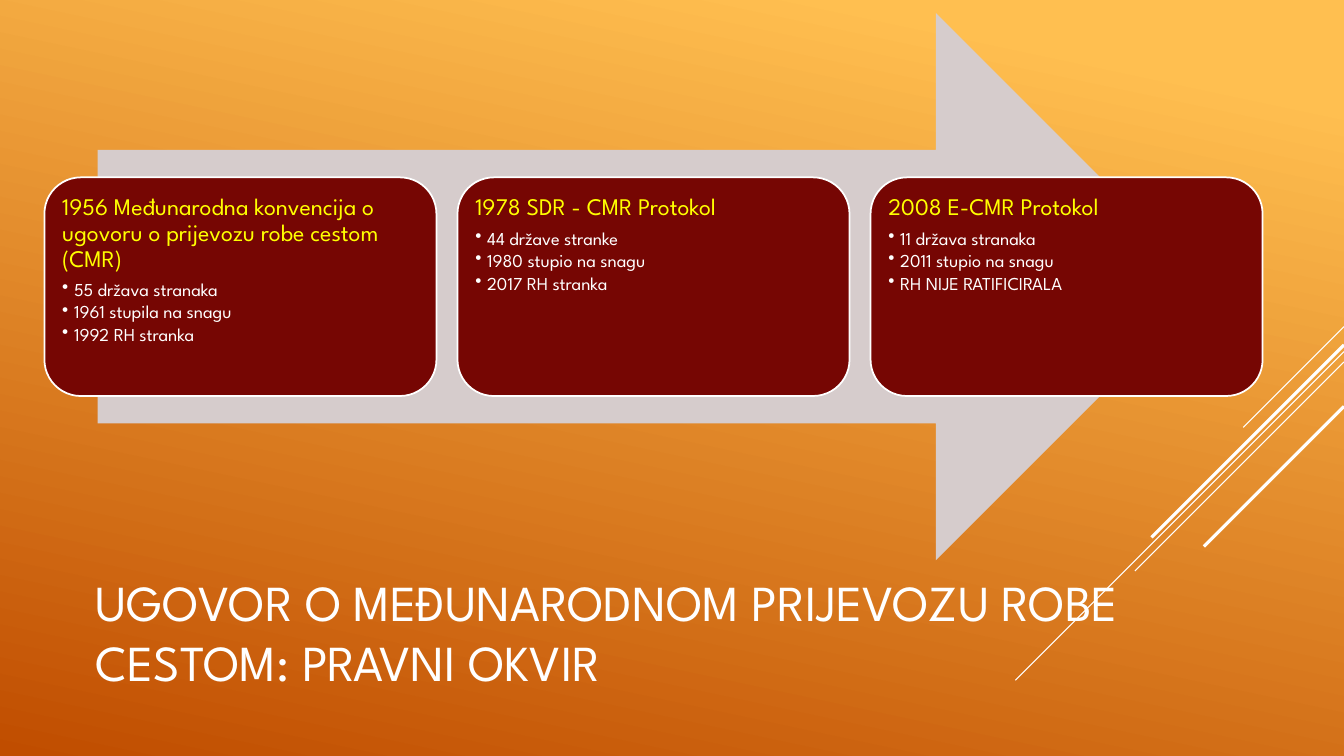
from lxml import etree
from pptx import Presentation
from pptx import util as u
from pptx.dml.color import RGBColor
from pptx.enum import shapes, text
from pptx.oxml.ns import qn

FONT = "League Spartan"
WHITE, YELLOW, MAROON, GREY = "FFFFFF", "FFFF00", "760603", "D6CCCC"
BACKGROUND = [(0.1, "FFBF50"), (1, "C04D00")]
BACKGROUND_ANGLE = 258

TITLE = "UGOVOR O MEĐUNARODNOM PRIJEVOZU ROBE CESTOM: PRAVNI OKVIR"
MILESTONES = [
    ("1956 Međunarodna konvencija o ugovoru o prijevozu robe cestom (CMR)",
     ["55 država stranaka", "1961 stupila na snagu", "1992 RH stranka"]),
    ("1978 SDR - CMR Protokol",
     ["44 države stranke", "1980 stupio na snagu", "2017 RH stranka"]),
    ("2008 E-CMR Protokol",
     ["11 država stranaka", "2011 stupio na snagu", "RH NIJE RATIFICIRALA"]),
]

SLIDE_WIDTH, SLIDE_HEIGHT = 33.87, 19.05
STREAKS = [(8.23, 2.54, 0.75), (8.86, 8.28, 0.75), (9.12, 5.27, 0.75),
           (8.69, 4.85, 2.25), (10.24, 3.53, 2.25)]
TITLE_BOX = (2.16, 13.82, 29.97, 4.19)
ARROW_BOX = (2.46, 0.33, 28.02, 13.79)
CARD_LEFT, CARD_TOP, CARD_WIDTH, CARD_HEIGHT = 1.12, 4.47, 9.88, 5.51
CARD_PITCH = 10.41
CARD_INSET = 0.18
BULLET_INDENT = 0.3


def paint(color, hex_code):
    color.rgb = RGBColor.from_string(hex_code)


def cm(*lengths):
    return [u.Cm(length) for length in lengths]


def write(paragraph, words, size, color, spacing=1.0, after=0, bullet=False):
    paragraph.alignment = text.PP_ALIGN.LEFT
    paragraph.line_spacing = spacing
    paragraph.space_after = u.Pt(after)
    run = paragraph.add_run()
    run.text = words
    run.font.name = FONT
    run.font.size = u.Pt(size)
    paint(run.font.color, color)
    if bullet:
        properties = paragraph._p.get_or_add_pPr()
        properties.set("marL", str(u.Cm(BULLET_INDENT)))
        properties.set("indent", str(-u.Cm(BULLET_INDENT)))
        etree.SubElement(properties, qn("a:buChar")).set("char", "•")


def add_block(slide, preset, box, fill, outline=None):
    block = slide.shapes.add_shape(preset, *cm(*box))
    block.shadow.inherit = False
    block.fill.solid()
    paint(block.fill.fore_color, fill)
    if outline:
        paint(block.line.color, outline)
        block.line.width = u.Pt(1.25)
    else:
        block.line.fill.background()
    return block


def add_streak(slide, top, run, weight):
    streak = slide.shapes.add_connector(
        shapes.MSO_CONNECTOR.STRAIGHT,
        *cm(SLIDE_WIDTH, top, SLIDE_WIDTH - run, top + run))
    paint(streak.line.color, WHITE)
    streak.line.width = u.Pt(weight)
    etree.SubElement(streak._element.spPr, qn("a:effectLst"))


def add_title(slide):
    frame = slide.shapes.add_textbox(*cm(*TITLE_BOX)).text_frame
    frame.word_wrap = True
    frame.vertical_anchor = text.MSO_ANCHOR.MIDDLE
    write(frame.paragraphs[0], TITLE, size=36, color=WHITE)


def add_card(slide, position, heading, facts):
    box = (CARD_LEFT + position * CARD_PITCH, CARD_TOP, CARD_WIDTH, CARD_HEIGHT)
    card = add_block(slide, shapes.MSO_SHAPE.ROUNDED_RECTANGLE, box, MAROON, WHITE)
    frame = card.text_frame
    frame.word_wrap = True
    frame.vertical_anchor = text.MSO_ANCHOR.TOP
    frame.margin_left = frame.margin_right = u.Cm(CARD_INSET)
    frame.margin_top = frame.margin_bottom = u.Cm(CARD_INSET)
    write(frame.paragraphs[0], heading, size=17, color=YELLOW, spacing=0.9, after=6)
    for fact in facts:
        write(frame.add_paragraph(), fact, size=13, color=WHITE,
              spacing=0.9, after=2, bullet=True)


def main():
    deck = Presentation()
    deck.slide_width, deck.slide_height = cm(SLIDE_WIDTH, SLIDE_HEIGHT)
    slide = deck.slides.add_slide(deck.slide_layouts[6])

    backdrop = slide.background.fill
    backdrop.gradient()
    backdrop.gradient_angle = BACKGROUND_ANGLE
    for stop, (position, hex_code) in zip(backdrop.gradient_stops, BACKGROUND):
        stop.position = position
        paint(stop.color, hex_code)

    for streak in STREAKS:
        add_streak(slide, *streak)
    add_title(slide)
    add_block(slide, shapes.MSO_SHAPE.RIGHT_ARROW, ARROW_BOX, GREY)
    for position, (heading, facts) in enumerate(MILESTONES):
        add_card(slide, position, heading, facts)

    deck.save("out.pptx")


if __name__ == "__main__":
    main()
